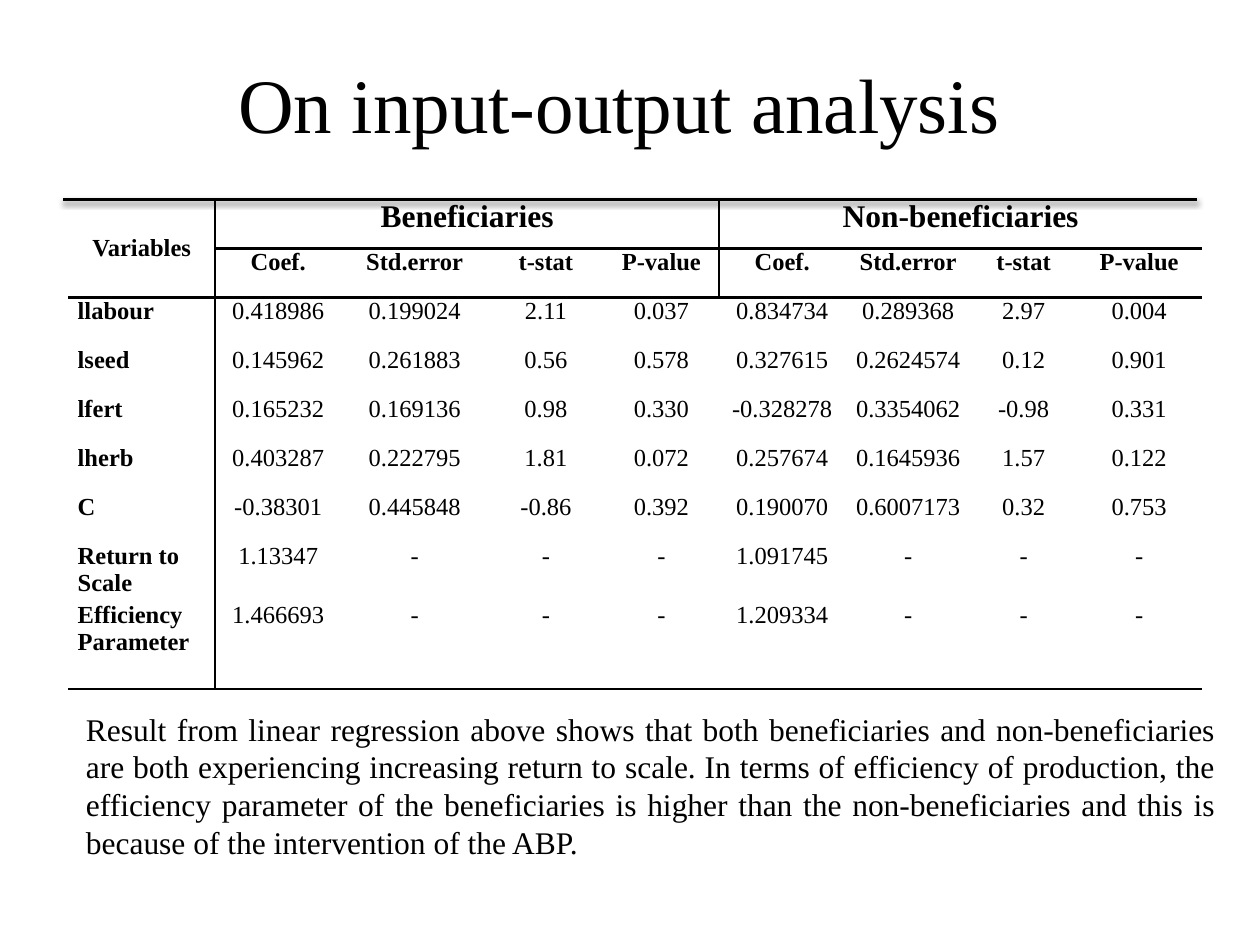
from typing import NamedTuple

from lxml import etree
from pptx import Presentation
from pptx.dml.color import RGBColor
from pptx.enum.shapes import MSO_CONNECTOR
from pptx.enum.text import MSO_ANCHOR, MSO_AUTO_SIZE, PP_ALIGN
from pptx.oxml import parse_xml
from pptx.oxml.ns import nsdecls, qn
from pptx.util import Pt

LEFT, CENTER, JUSTIFY = PP_ALIGN.LEFT, PP_ALIGN.CENTER, PP_ALIGN.JUSTIFY
TOP, MIDDLE = MSO_ANCHOR.TOP, MSO_ANCHOR.MIDDLE
FIT_SHAPE = MSO_AUTO_SIZE.SHAPE_TO_FIT_TEXT
STRAIGHT = MSO_CONNECTOR.STRAIGHT

FONT = "Times New Roman"
BLACK = "000000"
PLAIN_TABLE = "{2D5ABB26-0587-4C30-8999-92F81FD0307C}"  # no style, no grid
RULE_WIDTH = 1.5

COLUMN_WIDTHS = [84, 72, 84, 66, 66, 72, 72, 60, 72]
ROW_HEIGHTS = [28] * 7 + [34, 50]
MEASURES = ["Coef.", "Std.error", "t-stat", "P-value"]


class Box(NamedTuple):
    left: float
    top: float
    width: float
    height: float


class Group(NamedTuple):
    name: str
    first: int
    last: int


class Estimate(NamedTuple):
    variable: str
    values: list[str]


GROUPS = [Group("Beneficiaries", 1, 4), Group("Non-beneficiaries", 5, 8)]
ESTIMATES = [
    Estimate("llabour", ["0.418986", "0.199024", "2.11", "0.037",
                         "0.834734", "0.289368", "2.97", "0.004"]),
    Estimate("lseed", ["0.145962", "0.261883", "0.56", "0.578",
                       "0.327615", "0.2624574", "0.12", "0.901"]),
    Estimate("lfert", ["0.165232", "0.169136", "0.98", "0.330",
                       "-0.328278", "0.3354062", "-0.98", "0.331"]),
    Estimate("lherb", ["0.403287", "0.222795", "1.81", "0.072",
                       "0.257674", "0.1645936", "1.57", "0.122"]),
    Estimate("C", ["-0.38301", "0.445848", "-0.86", "0.392",
                   "0.190070", "0.6007173", "0.32", "0.753"]),
    Estimate("Return to Scale", ["1.13347", "-", "-", "-", "1.091745", "-", "-", "-"]),
    Estimate("Efficiency Parameter", ["1.466693", "-", "-", "-", "1.209334", "-", "-", "-"]),
]
FINDING = (
    "Result from linear regression above shows that both beneficiaries and "
    "non-beneficiaries are both experiencing increasing return to scale. In terms of "
    "efficiency of production, the efficiency parameter of the beneficiaries is higher "
    "than the non-beneficiaries and this is because of the intervention of the ABP."
)


def color(hex_code: str) -> RGBColor:
    return RGBColor.from_string(hex_code)


def write(frame, text: str, *, size: float = 14, bold: bool = False, align=CENTER) -> None:
    paragraph = frame.paragraphs[0]
    paragraph.alignment = align
    run = paragraph.add_run()
    run.text = text
    run.font.name = FONT
    run.font.size = Pt(size)
    run.font.bold = bold
    run.font.color.rgb = color(BLACK)


def add_text(slide, box: Box, text: str, *, anchor=TOP, auto_size=None, **text_format) -> None:
    frame = slide.shapes.add_textbox(*map(Pt, box)).text_frame
    frame.word_wrap = True
    frame.vertical_anchor = anchor
    if auto_size is not None:
        frame.auto_size = auto_size
    write(frame, text, **text_format)


def cell_edges(row: int, column: int) -> str:
    """Sides of a cell that carry a rule, in schema order: L, R, T, B."""
    header = row < 2
    edges = {
        "L": column == 1 or (header and column == 5),
        "R": column == 0 or (header and column == 4),
        "T": row == 2 or (row == 1 and column > 0),
        "B": header or row == len(ROW_HEIGHTS) - 1,
    }
    return "".join(side for side, ruled in edges.items() if ruled)


def format_cell(cell, edges: str) -> None:
    cell.margin_left = cell.margin_right = Pt(5.4)
    cell.margin_top = cell.margin_bottom = 0
    properties = cell._tc.get_or_add_tcPr()
    for side in "LRTB":
        line = etree.SubElement(properties, qn(f"a:ln{side}"))
        if side in edges:
            line.set("w", str(Pt(RULE_WIDTH)))
            fill = etree.SubElement(line, qn("a:solidFill"))
            etree.SubElement(fill, qn("a:srgbClr")).set("val", BLACK)
        else:
            etree.SubElement(line, qn("a:noFill"))
    cell.fill.background()


def add_regression_table(slide, box: Box) -> None:
    table = slide.shapes.add_table(len(ROW_HEIGHTS), len(COLUMN_WIDTHS), *map(Pt, box)).table
    table.first_row = table.horz_banding = False
    table._tbl.tblPr.find(qn("a:tableStyleId")).text = PLAIN_TABLE
    for column, width in zip(table.columns, COLUMN_WIDTHS):
        column.width = Pt(width)
    for row, height in zip(table.rows, ROW_HEIGHTS):
        row.height = Pt(height)
    for r in range(len(ROW_HEIGHTS)):
        for c in range(len(COLUMN_WIDTHS)):
            format_cell(table.cell(r, c), cell_edges(r, c))

    # Two header rows
    variables = table.cell(0, 0)
    variables.merge(table.cell(1, 0))
    variables.vertical_anchor = MIDDLE
    write(variables.text_frame, "Variables", bold=True)
    for group in GROUPS:
        heading = table.cell(0, group.first)
        heading.merge(table.cell(0, group.last))
        write(heading.text_frame, group.name, size=18, bold=True)
        for c, measure in enumerate(MEASURES, group.first):
            write(table.cell(1, c).text_frame, measure, bold=True)

    # Estimates
    for r, estimate in enumerate(ESTIMATES, 2):
        write(table.cell(r, 0).text_frame, estimate.variable, bold=True, align=LEFT)
        for c, value in enumerate(estimate.values, 1):
            write(table.cell(r, c).text_frame, value)


def add_shadowed_rule(slide, left: float, right: float, y: float) -> None:
    rule = slide.shapes.add_connector(STRAIGHT, Pt(left), Pt(y), Pt(right), Pt(y))
    rule.line.color.rgb = color(BLACK)
    rule.line.width = Pt(2)
    rule._element.spPr.append(parse_xml(
        f'<a:effectLst {nsdecls("a")}>'
        f'<a:outerShdw blurRad="{Pt(3.1)}" dist="{Pt(1.6)}" dir="5400000" rotWithShape="0">'
        f'<a:srgbClr val="{BLACK}"><a:alpha val="38000"/></a:srgbClr>'
        "</a:outerShdw></a:effectLst>"
    ))


def main() -> None:
    deck = Presentation()
    deck.slide_width, deck.slide_height = Pt(720), Pt(540)
    slide = deck.slides.add_slide(deck.slide_layouts[6])

    # Title
    add_text(slide, Box(30, 21.6, 648, 74.4), "On input-output analysis", size=44, anchor=MIDDLE)

    # Regression results
    add_regression_table(slide, Box(39, 114, sum(COLUMN_WIDTHS), sum(ROW_HEIGHTS)))

    # Finding
    add_text(slide, Box(42, 402, 660, 94.5), FINDING, size=18, align=JUSTIFY,
             auto_size=FIT_SHAPE)

    # Rule above the table
    add_shadowed_rule(slide, 36, 684, 114)

    deck.save("out.pptx")


if __name__ == "__main__":
    main()
